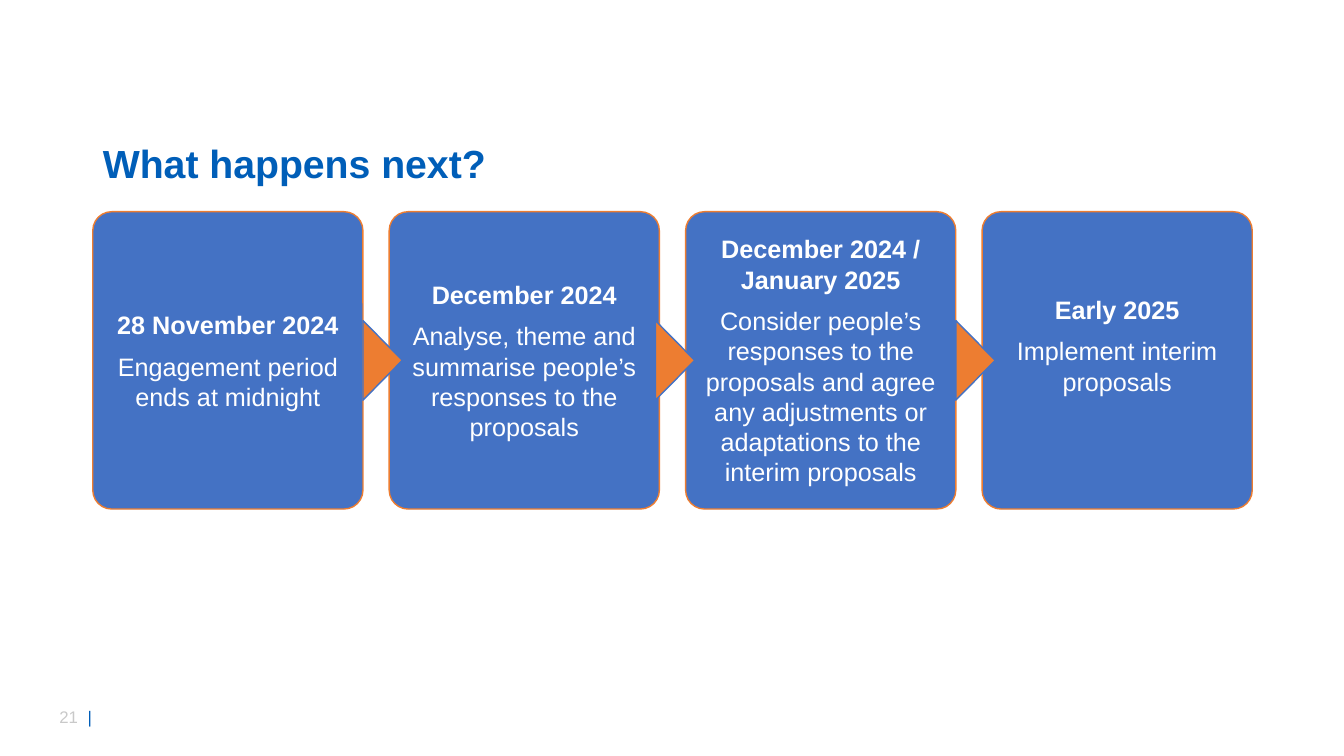
from lxml import etree
from pptx import Presentation
from pptx import util as u
from pptx.dml.color import RGBColor
from pptx.enum import shapes, text
from pptx.oxml import ns

FONT = "Arial"
TITLE_BLUE = RGBColor(0x00, 0x5E, 0xB8)
CARD_BLUE = RGBColor(0x44, 0x72, 0xC4)
ORANGE = RGBColor(0xED, 0x7D, 0x31)
WHITE = RGBColor(0xFF, 0xFF, 0xFF)
PALE_GREY = RGBColor(0xC9, 0xC9, 0xC9)

STEPS = [
    ("28 November 2024", "Engagement period ends at midnight"),
    ("December 2024",
     "Analyse, theme and summarise people’s responses to the proposals"),
    ("December 2024 / January 2025",
     "Consider people’s responses to the proposals and agree any "
     "adjustments or adaptations to the interim proposals"),
    ("Early 2025", "Implement interim proposals"),
]
CARD_WIDTH = 2.68
ARROW_NUDGES = [0, -0.04, 0]  # shift of each arrow from its card's right edge
ARROW_BASE, ARROW_DEPTH = 0.79, 0.39


def style_font(font, size, colour, bold=False):
    font.name = FONT
    font.size = u.Pt(size)
    font.bold = bold
    font.color.rgb = colour


def style_shape(shape, fill, line):
    shape.shadow.inherit = False
    shape.fill.solid()
    shape.fill.fore_color.rgb = fill
    shape.line.color.rgb = line
    shape.line.width = u.Pt(1)


def place_title(page, left, top, width, height):
    title = page.shapes.title
    title.left, title.top = u.Inches(left), u.Inches(top)
    title.width, title.height = u.Inches(width), u.Inches(height)
    frame = title.text_frame
    frame.text = "What happens next?"
    frame.word_wrap = True
    frame.vertical_anchor = text.MSO_ANCHOR.MIDDLE
    para = frame.paragraphs[0]
    para.alignment = text.PP_ALIGN.LEFT
    para.line_spacing = 0.9
    style_font(para.runs[0].font, 28, TITLE_BLUE, bold=True)


def add_card(page, left, top, width, height, date, action, bottom_inset):
    card = page.shapes.add_shape(
        shapes.MSO_SHAPE.ROUNDED_RECTANGLE,
        u.Inches(left), u.Inches(top), u.Inches(width), u.Inches(height))
    card.adjustments[0] = 0.07
    style_shape(card, CARD_BLUE, ORANGE)
    frame = card.text_frame
    frame.word_wrap = True
    frame.vertical_anchor = text.MSO_ANCHOR.MIDDLE
    frame.margin_left = frame.margin_right = u.Inches(0.1)
    frame.margin_top = u.Inches(0.16)
    frame.margin_bottom = u.Inches(bottom_inset)
    frame.text = f"{date}\n{action}"
    for para, bold in zip(frame.paragraphs, (True, False)):
        para.alignment = text.PP_ALIGN.CENTER
        style_font(para.runs[0].font, 18, WHITE, bold)
    frame.paragraphs[1].space_before = u.Pt(8)


def add_arrow(page, left, middle):
    """Place a triangle pointing right, its base at left."""
    arrow = page.shapes.add_shape(
        shapes.MSO_SHAPE.ISOSCELES_TRIANGLE,
        u.Inches(left + (ARROW_DEPTH - ARROW_BASE) / 2),
        u.Inches(middle - ARROW_DEPTH / 2),
        u.Inches(ARROW_BASE), u.Inches(ARROW_DEPTH))
    arrow.rotation = 90
    style_shape(arrow, ORANGE, CARD_BLUE)


def add_timeline(page, left, top, width, height):
    pitch = (width - CARD_WIDTH) / (len(STEPS) - 1)
    # Cards; the last one has its text set higher
    for index, (date, action) in enumerate(STEPS):
        bottom_inset = 0.46 if index == len(STEPS) - 1 else 0.16
        add_card(page, left + index * pitch, top, CARD_WIDTH, height,
                 date, action, bottom_inset)
    # Arrows between the cards
    for index, nudge in enumerate(ARROW_NUDGES):
        add_arrow(page, left + index * pitch + CARD_WIDTH + nudge,
                  top + height / 2)


def add_page_number(page, left, top, width, height):
    box = page.shapes.add_textbox(
        u.Inches(left), u.Inches(top), u.Inches(width), u.Inches(height))
    box.text_frame.word_wrap = True
    para = box.text_frame.paragraphs[0]
    # Tab stop that separates the number from the bar
    stops = etree.SubElement(para._p.get_or_add_pPr(), ns.qn("a:tabLst"))
    etree.SubElement(stops, ns.qn("a:tab"),
                     pos=str(u.Inches(0.28)), algn="l")
    for words, colour in (("21\t", PALE_GREY), ("|", TITLE_BLUE)):
        span = para.add_run()
        span.text = words
        style_font(span.font, 12, colour)


def main():
    deck = Presentation()
    deck.slide_width, deck.slide_height = u.Inches(13.33), u.Inches(7.5)
    page = deck.slides.add_slide(deck.slide_layouts[5])
    add_page_number(page, 0.49, 6.96, 0.85, 0.3)
    place_title(page, 0.92, 1.31, 11.5, 0.67)
    add_timeline(page, 0.92, 2.1, 11.5, 2.95)
    deck.save("out.pptx")


if __name__ == "__main__":
    main()
